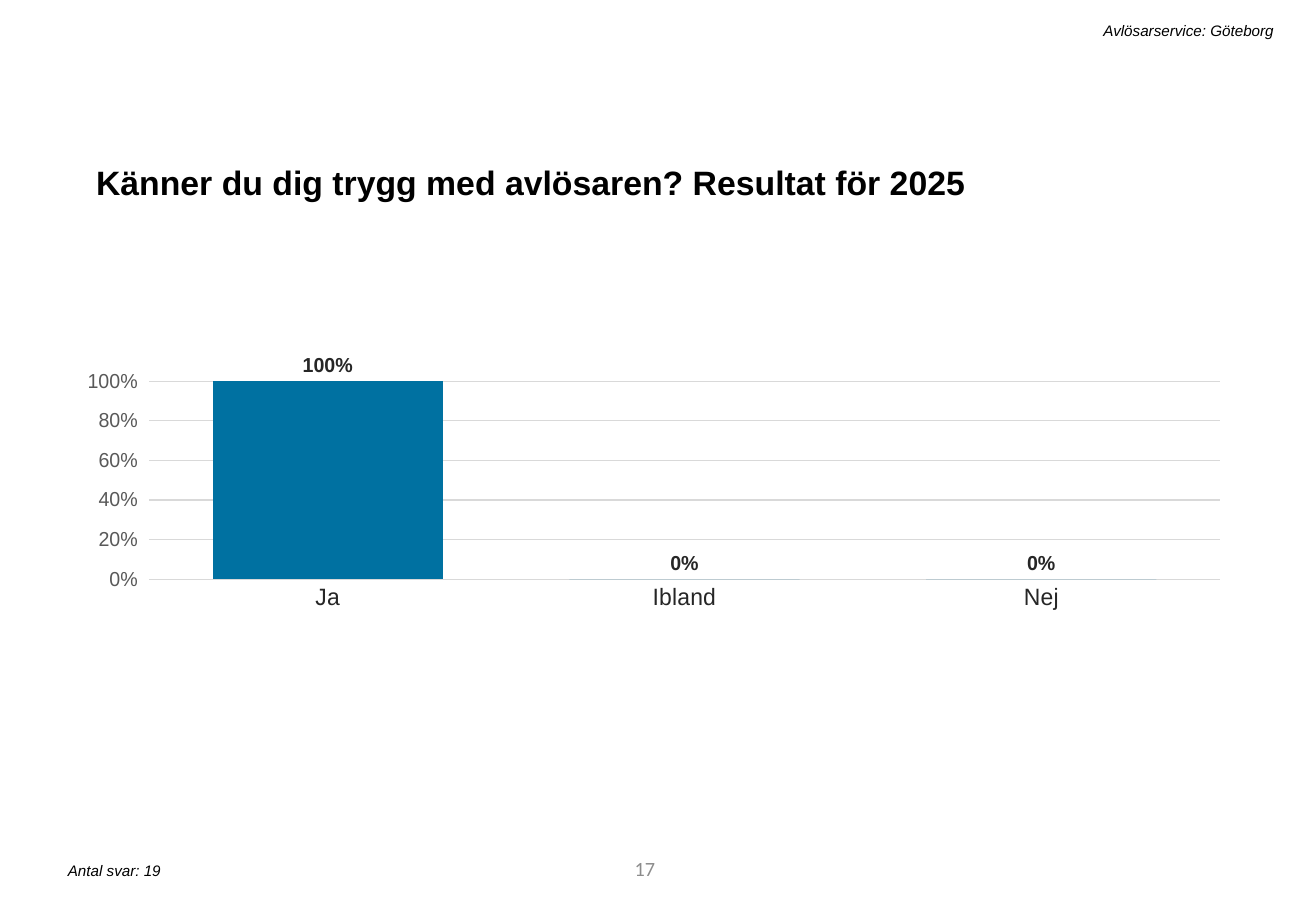
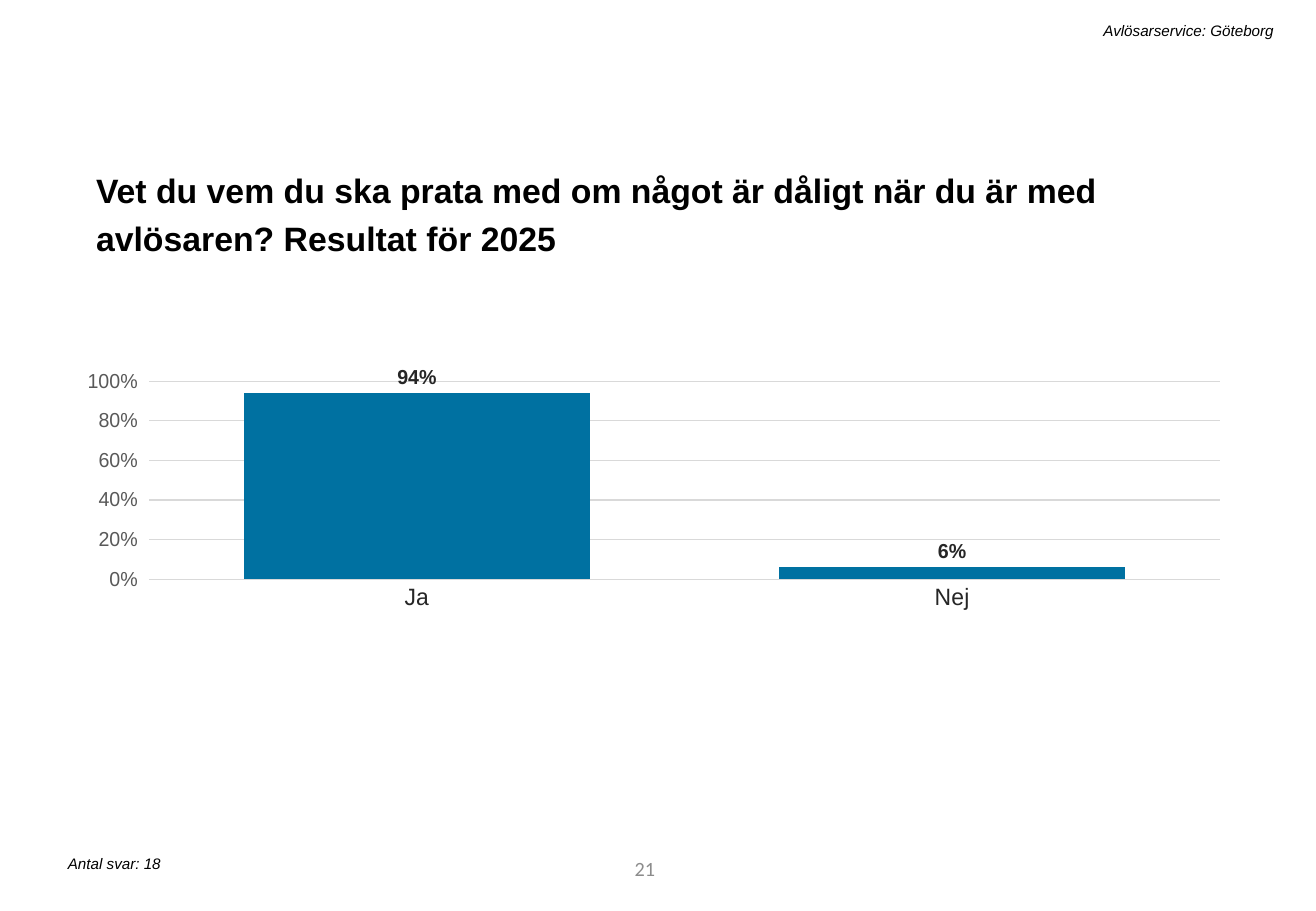
from dataclasses import dataclass

from lxml import etree
from pptx import Presentation
from pptx.chart.data import CategoryChartData
from pptx.dml.color import RGBColor
from pptx.enum.chart import XL_CHART_TYPE, XL_LABEL_POSITION, XL_TICK_MARK
from pptx.enum.text import MSO_ANCHOR, MSO_AUTO_SIZE, PP_ALIGN
from pptx.oxml.ns import qn
from pptx.util import Inches, Pt

COLUMNS = XL_CHART_TYPE.COLUMN_CLUSTERED
OUTSIDE_END = XL_LABEL_POSITION.OUTSIDE_END
TICK_NONE, TICK_OUT = XL_TICK_MARK.NONE, XL_TICK_MARK.OUTSIDE
TOP, MIDDLE = MSO_ANCHOR.TOP, MSO_ANCHOR.MIDDLE
FIXED, GROW = MSO_AUTO_SIZE.NONE, MSO_AUTO_SIZE.SHAPE_TO_FIT_TEXT
LEFT, RIGHT = PP_ALIGN.LEFT, PP_ALIGN.RIGHT


@dataclass(frozen=True)
class Theme:
    """Fonts, colours and type sizes shared by the slides."""
    font: str = "Arial"
    number_font: str = "Calibri"
    text: str = "000000"
    page: str = "8C8C8C"
    label: str = "262626"
    scale: str = "595959"
    grid: str = "D9D9D9"
    bar: str = "0071A1"
    title_size: float = 20
    category_size: float = 14
    body_size: float = 12
    chart_size: float = 10
    note_size: float = 9
    line_width: float = 0.75


@dataclass(frozen=True)
class Question:
    """One survey question with its result."""
    title: str
    title_height: float
    answers: dict[str, float]
    count: int
    count_top: float
    page: int
    line_spacing: float = 1.0
    space_before: float = 0


THEME = Theme()
HEADER = "Avlösarservice: Göteborg"
PLOT = {"x": 0.025, "y": 0.154, "w": 0.966, "h": 0.413}

QUESTIONS = [
    Question("Känner du dig trygg med avlösaren? Resultat för 2025", 0.44,
             {"Ja": 1, "Ibland": 0, "Nej": 0}, 19, 7.04, 17),
    Question("Vet du vem du ska prata med om något är dåligt när du är med "
             "avlösaren? Resultat för 2025", 0.87,
             {"Ja": 0.94, "Nej": 0.06}, 18, 6.98, 21, 1.2, 10),
]


def style_font(font, size: float, color: str, name: str = THEME.font,
               bold: bool = False, italic: bool = False) -> None:
    """Format a font."""
    font.name, font.size = name, Pt(size)
    font.bold, font.italic = bold, italic
    font.color.rgb = RGBColor.from_string(color)


def place(sp, left: float, top: float, width: float, height: float) -> None:
    """Set the position and size of a shape in inches."""
    sp.left, sp.top = Inches(left), Inches(top)
    sp.width, sp.height = Inches(width), Inches(height)


def write(sp, text: str, size: float, color: str = THEME.text, align=LEFT,
          anchor=TOP, auto_size=GROW, **font):
    """Fill a shape with one formatted paragraph and return it."""
    tf = sp.text_frame
    tf.word_wrap, tf.auto_size, tf.vertical_anchor = True, auto_size, anchor
    p = tf.paragraphs[0]
    p.alignment = align
    r = p.add_run()
    r.text = text
    style_font(r.font, size, color, **font)
    return p


def add_text(s, box: tuple[float, float, float, float], text: str,
             size: float, **style) -> None:
    """Add a text box with one formatted paragraph."""
    write(s.shapes.add_textbox(*map(Inches, box)), text, size, **style)


def add_title(s, q: Question) -> None:
    """Place and fill the title placeholder."""
    sp = s.shapes.title
    place(sp, 0.69, 1.28, 9.4, q.title_height)
    p = write(sp, q.title, THEME.title_size, bold=True)
    p.line_spacing, p.space_before = q.line_spacing, Pt(q.space_before)


def set_plot_layout(chart) -> None:
    """Fix the inner plot area as fractions of the chart."""
    plot_area = chart.plots[0]._element.getparent()
    for old in plot_area.findall(qn("c:layout")):
        plot_area.remove(old)
    layout = etree.Element(qn("c:layout"))
    manual = etree.SubElement(layout, qn("c:manualLayout"))
    settings = {"layoutTarget": "inner", "xMode": "edge", "yMode": "edge", **PLOT}
    for tag, value in settings.items():
        etree.SubElement(manual, qn(f"c:{tag}")).set("val", str(value))
    plot_area.insert(0, layout)


def style_line(line) -> None:
    """Give a chart line the grid colour and width."""
    line.color.rgb = RGBColor.from_string(THEME.grid)
    line.width = Pt(THEME.line_width)


def add_result_chart(s, answers: dict[str, float]) -> None:
    """Add the column chart of answer shares."""
    data = CategoryChartData(number_format="0%")
    data.categories = list(answers)
    data.add_series("Series 1", list(answers.values()))
    box = map(Inches, (0.72, 2.53, 9.4, 3.95))
    chart = s.shapes.add_chart(COLUMNS, *box, data).chart
    chart.has_title = chart.has_legend = False
    style_font(chart.font, THEME.chart_size, THEME.text)
    set_plot_layout(chart)

    cat = chart.category_axis
    cat.major_tick_mark = cat.minor_tick_mark = TICK_NONE
    style_font(cat.tick_labels.font, THEME.category_size, THEME.label)
    style_line(cat.format.line)

    val = chart.value_axis
    val.minimum_scale, val.maximum_scale, val.major_unit = 0, 1, 0.2
    val.major_tick_mark, val.minor_tick_mark = TICK_OUT, TICK_NONE
    val.tick_labels.number_format = "0%"
    val.tick_labels.number_format_is_linked = False
    style_font(val.tick_labels.font, THEME.body_size, THEME.scale)
    val.format.line.fill.background()
    style_line(val.major_gridlines.format.line)

    plot = chart.plots[0]
    plot.gap_width, plot.vary_by_categories = 55, False
    fill = plot.series[0].format.fill
    fill.solid()
    fill.fore_color.rgb = RGBColor.from_string(THEME.bar)
    labels = plot.series[0].data_labels
    labels.show_value, labels.position = True, OUTSIDE_END
    labels.number_format, labels.number_format_is_linked = "0%", False
    style_font(labels.font, THEME.body_size, THEME.label, bold=True)


def add_question(prs, q: Question) -> None:
    """Add the slide of one question."""
    s = prs.slides.add_slide(prs.slide_layouts[5])
    add_title(s, q)
    add_result_chart(s, q.answers)
    add_text(s, (1.72, 0.13, 8.86, 0.25), HEADER, THEME.note_size,
             align=RIGHT, italic=True)
    add_text(s, (0.46, q.count_top, 4.41, 0.25), f"Antal svar: {q.count}",
             THEME.note_size, italic=True)
    add_text(s, (3.05, 6.95, 2.44, 0.4), str(q.page), THEME.body_size,
             color=THEME.page, name=THEME.number_font, align=RIGHT,
             anchor=MIDDLE, auto_size=FIXED)


def main() -> None:
    """Build and save the presentation."""
    prs = Presentation()
    prs.slide_width, prs.slide_height = Inches(10.83), Inches(7.5)
    for q in QUESTIONS:
        add_question(prs, q)
    prs.save("out.pptx")


if __name__ == "__main__":
    main()
